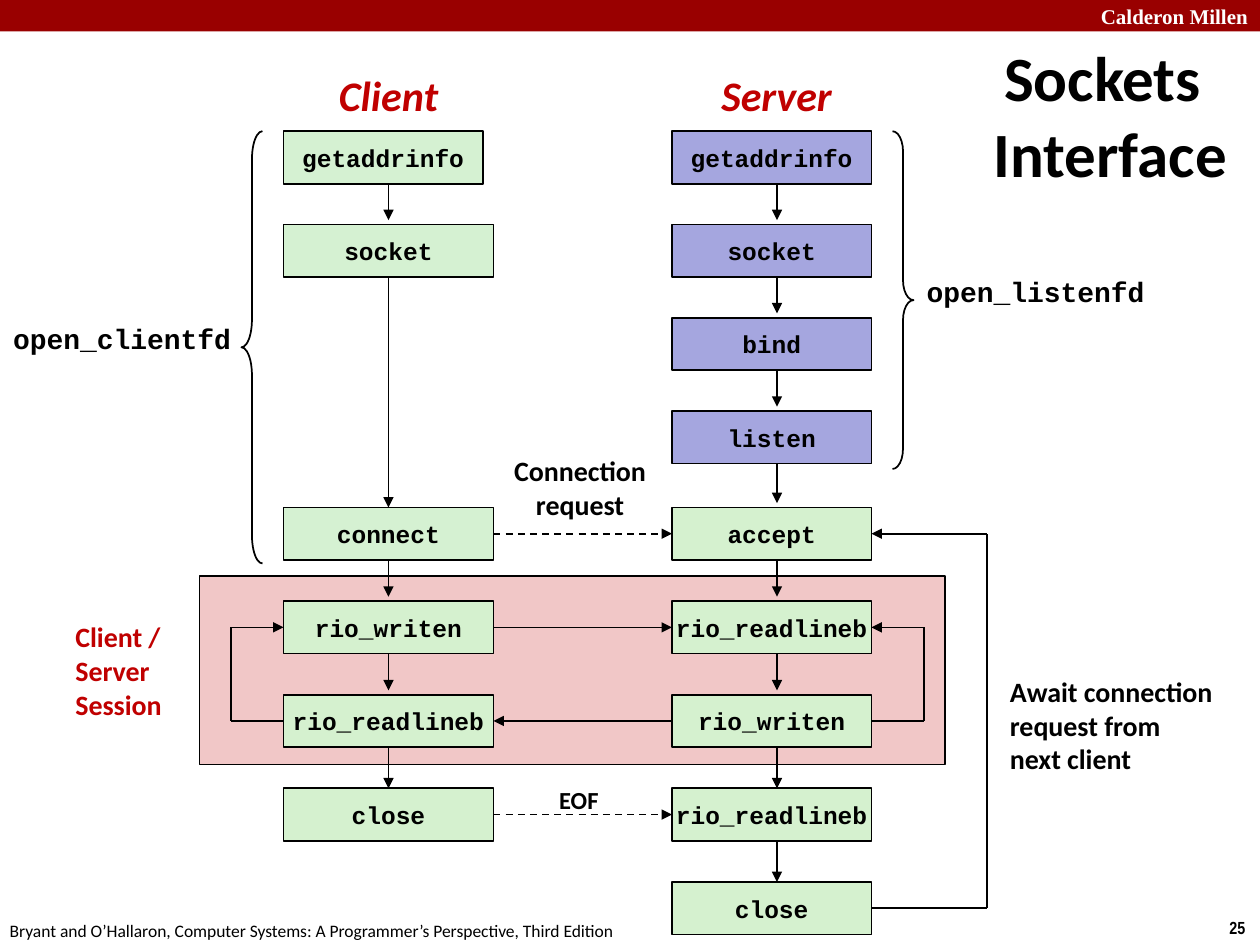
"""Builds the sockets interface slide: client and server call sequences side by side."""
import pptx
import pptx.dml.color
import pptx.enum.dml
import pptx.enum.shapes
import pptx.enum.text
import pptx.oxml
import pptx.oxml.ns
import pptx.util

Pt = pptx.util.Pt
SHAPE = pptx.enum.shapes.MSO_SHAPE
ALIGN = pptx.enum.text.PP_ALIGN
TOP, LEFT, BOTTOM, RIGHT = range(4)
BLACK, RED, BAR, PINK = "000000", "C00000", "990000", "F1C7C7"
MINT, GREEN, VIOLET = "D5F1D2", "D5F1CF", "A5A6DF"


def paint(color_format, color):
    color_format.rgb = pptx.dml.color.RGBColor.from_string(color)


def side(box, site):
    x, y = box.left.pt, box.top.pt
    w, h = box.width.pt, box.height.pt
    return [(x + w / 2, y), (x, y + h / 2), (x + w / 2, y + h), (x + w, y + h / 2)][site]


class Diagram:
    code = {"name": "Courier New", "size": Pt(14), "bold": True}
    label = {"name": "Calibri", "size": Pt(16), "bold": True}
    line_width = Pt(1)

    def __init__(self, slide):
        self.slide = slide

    def letter(self, shape, text, font, color, align, wrap):
        frame = shape.text_frame
        layout = {"text": text, "word_wrap": wrap,
                  "vertical_anchor": pptx.enum.text.MSO_ANCHOR.MIDDLE}
        for name, value in layout.items():
            setattr(frame, name, value)
        for paragraph in frame.paragraphs:
            paragraph.alignment = align
            for name, value in font.items():
                setattr(paragraph.font, name, value)
            paint(paragraph.font.color, color)

    def text(self, area, text, color=BLACK, align=ALIGN.CENTER, wrap=False, **font):
        box = self.slide.shapes.add_textbox(*map(Pt, area))
        self.letter(box, text, {**self.label, **font}, color, align, wrap)
        return box

    def shape(self, kind, area, fill=None, outlined=True):
        shape = self.slide.shapes.add_shape(kind, *map(Pt, area))
        shape.shadow.inherit = False
        if fill:
            shape.fill.solid()
            paint(shape.fill.fore_color, fill)
        else:
            shape.fill.background()
        if outlined:
            paint(shape.line.color, BLACK)
            shape.line.width = self.line_width
        else:
            shape.line.fill.background()
        return shape

    def call(self, area, name, fill):
        box = self.shape(SHAPE.RECTANGLE, area, fill)
        self.letter(box, name, self.code, BLACK, ALIGN.CENTER, False)
        return box

    def brace(self, kind, area, curl):
        self.shape(kind, area).adjustments[0] = curl

    def link(self, start, end, arrow=True, dashed=False):
        joined = [not isinstance(place[0], (int, float)) for place in (start, end)]
        points = [side(*place) if join else place for place, join in zip((start, end), joined)]
        line = self.slide.shapes.add_connector(
            pptx.enum.shapes.MSO_CONNECTOR.STRAIGHT, *(Pt(v) for point in points for v in point))
        if joined[0]:
            line.begin_connect(*start)
        if joined[1]:
            line.end_connect(*end)
        paint(line.line.color, BLACK)
        line.line.width = self.line_width
        if dashed:
            line.line.dash_style = pptx.enum.dml.MSO_LINE.DASH
        properties = line._element.spPr
        if arrow:
            tip = pptx.oxml.parse_xml(f'<a:tailEnd {pptx.oxml.ns.nsdecls("a")} type="triangle"/>')
            properties.find(pptx.oxml.ns.qn("a:ln")).append(tip)
        properties.append(pptx.oxml.parse_xml(f'<a:effectLst {pptx.oxml.ns.nsdecls("a")}/>'))

    def loop(self, start, end, site, x):
        low, high = (x, side(start, site)[1]), (x, side(end, site)[1])
        self.link((start, site), low, arrow=False)
        self.link(low, high, arrow=False)
        self.link(high, (end, site))


def main():
    deck = pptx.Presentation()
    deck.slide_width, deck.slide_height = Pt(720), Pt(540)
    d = Diagram(deck.slides.add_slide(deck.slide_layouts[6]))

    d.shape(SHAPE.RECTANGLE, (0, 0, 720, 18), BAR, outlined=False)
    d.text((622, -2, 103, 22), "Calderon Millen", "FFFFFF", ALIGN.LEFT,
           name="Times New Roman", size=Pt(12))
    d.text((695.5, 520.5, 24.5, 19.5), "25", align=ALIGN.LEFT, name="Arial Narrow", size=Pt(10))
    d.text((-1.5, 522, 366, 19.5),
           "Bryant and O’Hallaron, Computer Systems: A Programmer’s Perspective, Third Edition",
           align=ALIGN.LEFT, size=Pt(10), bold=False)
    title = d.text((546, 18, 168, 94.5), "Sockets Interface", wrap=True, size=Pt(36))
    hanging = title.text_frame.paragraphs[0]._p.get_or_add_pPr()
    for name, value in {"marL": Pt(9), "indent": Pt(-9)}.items():
        hanging.set(name, str(value))

    d.shape(SHAPE.RECTANGLE, (114, 329, 426, 108), PINK)

    row_tops = [75 + 53.3 * i for i in range(4)] + [290 + 53.5 * i for i in range(5)]
    client_calls = {0: ("getaddrinfo", MINT, 114), 1: ("socket", MINT, 120),
                    4: ("connect", MINT, 120), 5: ("rio_writen", GREEN, 120),
                    6: ("rio_readlineb", GREEN, 120), 7: ("close", GREEN, 120)}
    server_calls = ["getaddrinfo", "socket", "bind", "listen", "accept",
                    "rio_readlineb", "rio_writen", "rio_readlineb", "close"]
    client = {row: d.call((162, row_tops[row], width, 30), name, fill)
              for row, (name, fill, width) in client_calls.items()}
    server = [d.call((384, top, 114, 30), name, VIOLET if row < 4 else GREEN)
              for row, (top, name) in enumerate(zip(row_tops, server_calls))]

    gap = 2.5
    d.link((222, row_tops[0] + 30), (222, row_tops[1] - gap))
    for row, following in ((1, 4), (4, 5), (5, 6), (6, 7)):
        reaches = following in (4, 7)
        tip = (client[following], TOP) if reaches else (222, row_tops[following] - gap)
        d.link((client[row], BOTTOM), tip)
    for row, top in enumerate(row_tops[1:]):
        d.link((444, row_tops[row] + 30), (444, top - (gap if row < 6 else 0)))

    for row in (4, 5, 7):
        d.link((client[row], RIGHT), (server[row], LEFT), dashed=row != 5)
    d.link((server[6], LEFT), (client[6], RIGHT))
    d.loop(client[6], client[5], LEFT, 132)
    d.loop(server[6], server[5], RIGHT, 528)
    d.loop(server[8], server[4], RIGHT, 564)

    d.brace(SHAPE.LEFT_BRACE, (138, 75, 12, 247), 1.33)
    d.brace(SHAPE.RIGHT_BRACE, (510, 75, 12, 193), 0.96)
    d.text((0, 180, 139.5, 26.5), "open_clientfd", name="Courier New")
    d.text((522, 153.5, 139.5, 26.5), "open_listenfd", name="Courier New")

    for x, width, role in ((186, 72, "Client"), (404.5, 78.5, "Server")):
        d.text((x, 36, width, 36), role, RED, size=Pt(24), italic=True)
    d.text((286, 255.5, 91, 46), "Connection\nrequest")
    d.text((312, 445, 37.5, 24.5), "EOF", size=Pt(14))
    d.text((36, 350.5, 66, 65), "Client / Server\nSession", RED, ALIGN.LEFT, wrap=True)
    d.text((570, 381.5, 132, 65.5), "Await connection\nrequest from\nnext client", align=ALIGN.LEFT)

    deck.save("out.pptx")


if __name__ == "__main__":
    main()
